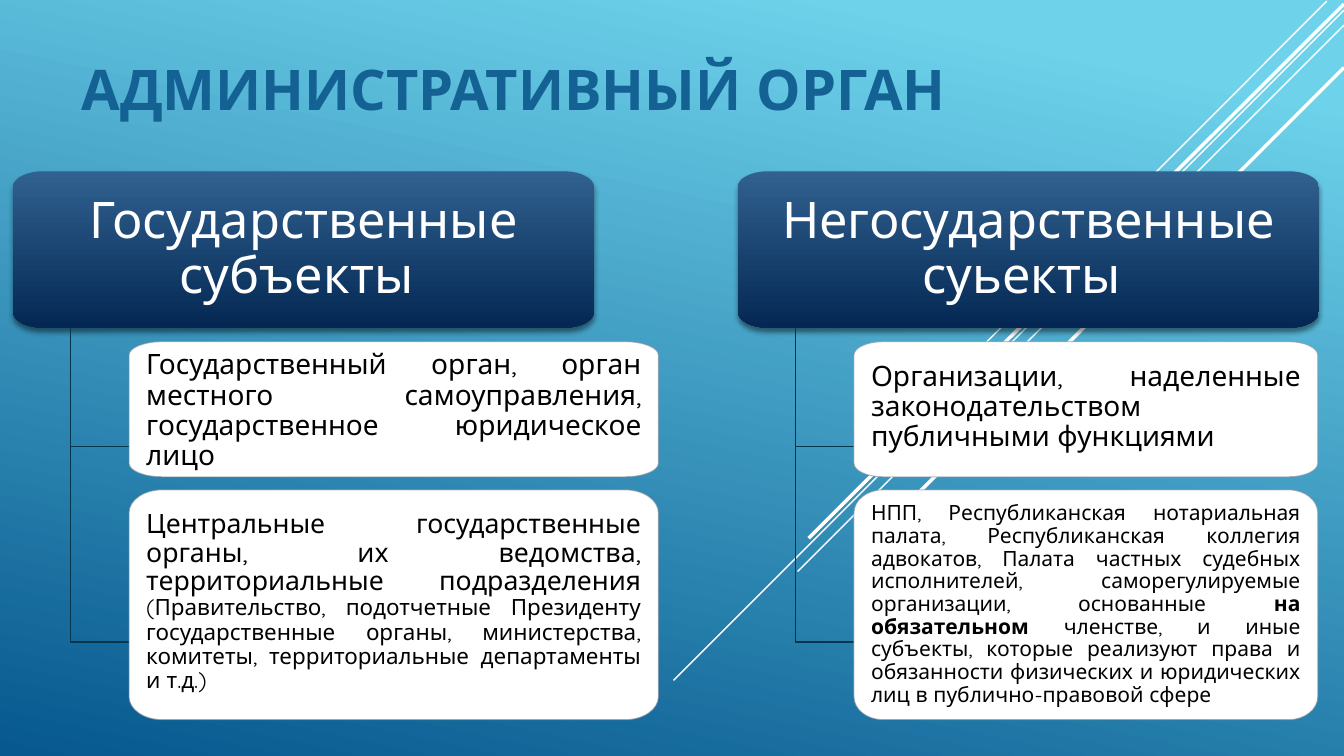
from dataclasses import dataclass

from lxml.etree import SubElement
from pptx import Presentation
from pptx.dml.color import RGBColor
from pptx.enum.shapes import MSO_CONNECTOR
from pptx.enum.text import MSO_ANCHOR as Anchor, MSO_AUTO_SIZE as AutoSize, PP_ALIGN as Align
from pptx.oxml.ns import qn
from pptx.shapes.autoshape import Shape
from pptx.slide import Slide
from pptx.util import Inches, Pt

FONT = "Quicksand"
COLORS = {
    "sky": "6ED2EB", "sea": "06588E", "title": "146194", "white": "FFFFFF",
    "head_top": "316190", "head_bottom": "042853", "elbow": "04364E",
    "card_edge": "89919C", "black": "000000",
}
HEAD_TOP, HEAD_W, HEAD_H = 1.7, 5.76, 1.55
CARD_SPANS = ((3.39, 1.34), (4.86, 2.28))
STEM_INSET, CARD_INSET, ELBOW_DROP = 0.57, 1.15, 0.37
CURVE = 0.55


@dataclass(frozen=True)
class Streak:
    x1: float
    y1: float
    x2: float
    y2: float
    width: float = 1


@dataclass(frozen=True)
class Run:
    text: str
    size: float
    color: str = "black"
    bold: bool = False


@dataclass(frozen=True)
class Card:
    runs: tuple[Run, ...]
    shift: float = 0


@dataclass(frozen=True)
class Branch:
    left: float
    heading: str
    card_width: float
    cards: tuple[Card, ...]


STREAKS = (
    Streak(13.16, 0.01, 9, 4.18),
    Streak(13.33, 0.1, 6.68, 6.75),
    Streak(13.33, 0.25, 7.91, 5.67),
    Streak(13.33, 0.04, 8.02, 5.34, 2.5),
    Streak(13.33, 0.67, 8.58, 5.42, 2.5),
)
BRANCHES = (
    Branch(0.13, "Государственные субъекты ", 5.25, (
        Card((Run("Государственный орган, орган местного самоуправления, "
                  "государственное юридическое лицо", 20),), 0.02),
        Card((Run("Центральные государственные органы, их ведомства, "
                  "территориальные подразделения ", 19),
              Run("(Правительство, подотчетные Президенту государственные органы, "
                  "министерства, комитеты, территориальные департаменты и т.д.)", 16)),
             -0.03),
    )),
    Branch(7.32, "Негосударственные суьекты ", 4.6, (
        Card((Run("Организации, наделенные законодательством "
                  "публичными функциями", 20),), -0.02),
        Card((Run("НПП, Республиканская нотариальная палата, Республиканская коллегия "
                  "адвокатов, Палата частных судебных исполнителей, "
                  "саморегулируемые организации, основанные", 15),
              Run(" на обязательном", 15, bold=True),
              Run(" членстве, и иные субъекты, которые реализуют права и обязанности "
                  "физических и юридических лиц в публично-правовой сфере", 15))),
    )),
)


def rgb(name: str) -> RGBColor:
    return RGBColor.from_string(COLORS[name])


def set_gradient(fill, stops, angle: float) -> None:
    """Set a two-stop gradient; the angle runs counter-clockwise."""
    fill.gradient()
    fill.gradient_angle = angle
    for stop, (position, name) in zip(fill.gradient_stops, stops):
        stop.position = position
        stop.color.rgb = rgb(name)


def set_alpha(parent, percent: int) -> None:
    """Make the first colour found inside an XML element translucent."""
    color = next(parent.iter(qn("a:srgbClr")))
    SubElement(color, qn("a:alpha"), val=str(percent * 1000))


def add_shadow(sp: Shape) -> None:
    effects = sp._element.spPr.find(qn("a:effectLst"))
    shadow = SubElement(effects, qn("a:outerShdw"), blurRad=str(Pt(4)),
                        dist=str(Pt(3)), dir="5400000", rotWithShape="0")
    SubElement(shadow, qn("a:srgbClr"), val=COLORS["black"])
    set_alpha(shadow, 46)


def add_outline(slide: Slide, points, close: bool) -> Shape:
    points = [(Inches(x), Inches(y)) for x, y in points]
    builder = slide.shapes.build_freeform(*points[0])
    builder.add_line_segments(points[1:], close=close)
    sp = builder.convert_to_shape()
    sp.shadow.inherit = False
    return sp


def add_rounded_box(slide: Slide, x: float, y: float, w: float, h: float,
                    corner: float) -> Shape:
    """Add a box with elliptical corners, corner wide as a share of the width."""
    rx, ry = corner * w, 0.1 * h
    right, bottom = x + w, y + h
    sp = add_outline(slide, (
        (x, y + ry), (x + rx, y), (right - rx, y), (right, y + ry),
        (right, bottom - ry), (right - rx, bottom), (x + rx, bottom), (x, bottom - ry),
    ), close=True)
    nodes = list(sp._element.spPr.iter(qn("a:pt")))
    ends = [(int(pt.get("x")), int(pt.get("y"))) for pt in nodes]
    for i in range(0, len(ends), 2):
        (px, py), (qx, qy) = ends[i], ends[i + 1]
        vx, vy = (px, qy) if i % 4 == 0 else (qx, py)
        segment = nodes[i + 1].getparent()
        segment.tag = qn("a:cubicBezTo")
        for place, (ax, ay) in enumerate(((px, py), (qx, qy))):
            control = SubElement(segment, qn("a:pt"),
                                 x=str(round(ax + CURVE * (vx - ax))),
                                 y=str(round(ay + CURVE * (vy - ay))))
            segment.insert(place, control)
    return sp


def add_text(sp: Shape, runs: tuple[Run, ...], align: Align, anchor: Anchor,
             inset_x: float, inset_y: float, spacing: float = 0.9,
             shift: float = 0) -> None:
    """Fill a shape with one paragraph; shift moves centred text down."""
    tf = sp.text_frame
    tf.word_wrap = True
    tf.auto_size = AutoSize.NONE
    tf.vertical_anchor = anchor
    tf.margin_left = tf.margin_right = Inches(inset_x)
    tf.margin_top = Inches(inset_y + shift)
    tf.margin_bottom = Inches(inset_y - shift)
    p = tf.paragraphs[0]
    p.alignment = align
    p.line_spacing = spacing
    for run in runs:
        r = p.add_run()
        r.text = run.text
        r.font.name = FONT
        r.font.size = Pt(run.size)
        r.font.bold = run.bold
        r.font.color.rgb = rgb(run.color)


def add_streak(slide: Slide, streak: Streak) -> None:
    line = slide.shapes.add_connector(
        MSO_CONNECTOR.STRAIGHT, Inches(streak.x1), Inches(streak.y1),
        Inches(streak.x2), Inches(streak.y2))
    line.line.color.rgb = rgb("white")
    line.line.width = Pt(streak.width)
    SubElement(line._element.spPr, qn("a:effectLst"))


def add_heading(slide: Slide, branch: Branch) -> None:
    sp = add_rounded_box(slide, branch.left, HEAD_TOP, HEAD_W, HEAD_H, 0.05)
    set_gradient(sp.fill, ((0, "head_top"), (1, "head_bottom")), 270)
    sp.line.fill.background()
    add_shadow(sp)
    add_text(sp, (Run(branch.heading, 36, "white"),), Align.CENTER,
             Anchor.MIDDLE, 0.18, 0.14)


def add_elbow(slide: Slide, left: float, bottom: float) -> None:
    stem, end = left + STEM_INSET, left + CARD_INSET
    sp = add_outline(slide, ((stem, HEAD_TOP + HEAD_H), (stem, bottom), (end, bottom)),
                     close=False)
    sp.fill.background()
    sp.line.color.rgb = rgb("elbow")
    sp.line.width = Pt(1.25)


def add_card(slide: Slide, branch: Branch, card: Card, top: float, height: float) -> None:
    sp = add_rounded_box(slide, branch.left + CARD_INSET, top,
                         branch.card_width, height, 0.0625)
    sp.fill.solid()
    sp.fill.fore_color.rgb = rgb("white")
    sp.line.color.rgb = rgb("card_edge")
    sp.line.width = Pt(0.75)
    set_alpha(sp._element.spPr.find(qn("a:ln")), 60)
    add_text(sp, card.runs, Align.JUSTIFY, Anchor.MIDDLE, 0.17, 0.13, shift=card.shift)


def main() -> None:
    prs = Presentation()
    prs.slide_width, prs.slide_height = Inches(13.33), Inches(7.5)
    slide = prs.slides.add_slide(prs.slide_layouts[5])
    set_gradient(slide.background.fill, ((0.1, "sky"), (1, "sea")), 258)
    for streak in STREAKS:
        add_streak(slide, streak)
    title = slide.shapes.title
    title.left, title.top = Inches(0.71), Inches(0.01)
    title.width, title.height = Inches(10.97), Inches(1.25)
    add_text(title, (Run("АДМИНИСТРАТИВНЫЙ ОРГАН", 40, "title", True),),
             Align.JUSTIFY, Anchor.BOTTOM, 0.1, 0.05, spacing=1.0)
    for branch in BRANCHES:
        add_heading(slide, branch)
        for card, (top, height) in zip(branch.cards, CARD_SPANS):
            add_elbow(slide, branch.left, top + height / 2 + ELBOW_DROP)
            add_card(slide, branch, card, top, height)
    prs.save("out.pptx")


if __name__ == "__main__":
    main()
